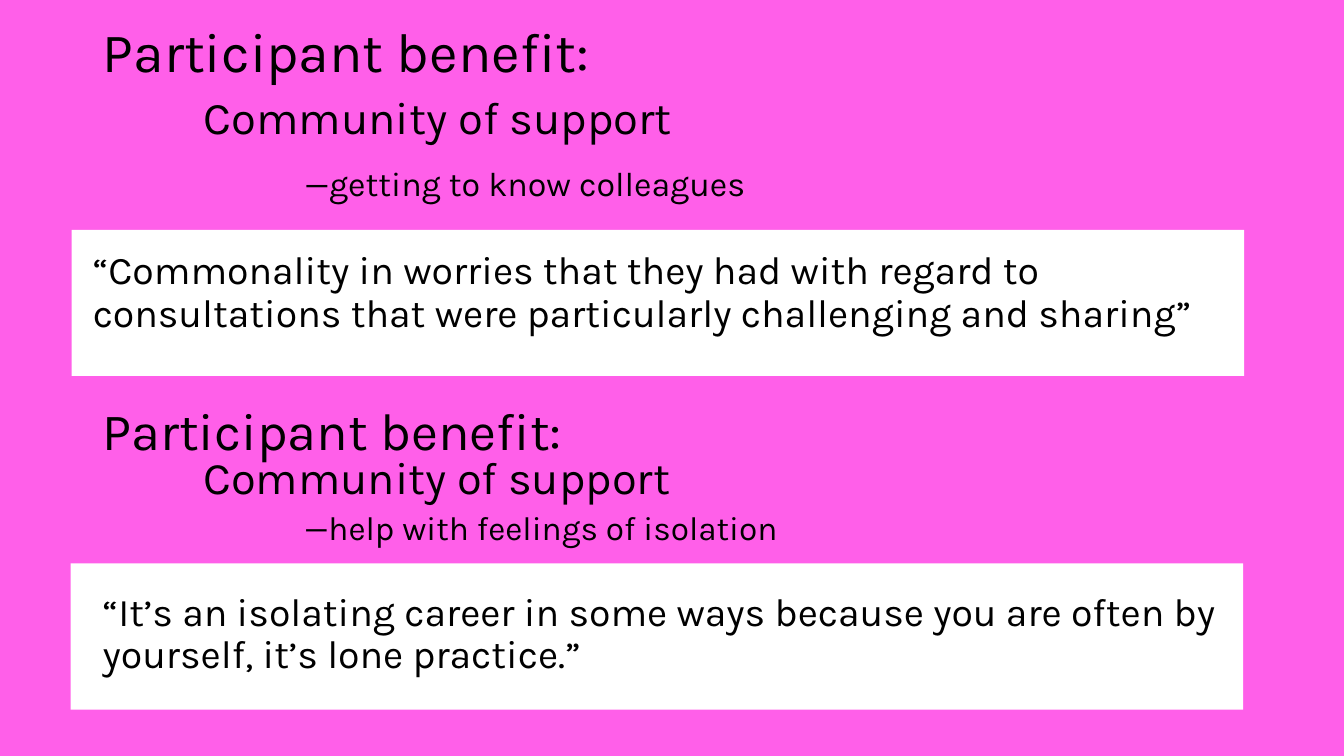
from dataclasses import dataclass

from lxml import etree
from pptx import Presentation
from pptx.dml.color import RGBColor
from pptx.enum.shapes import MSO_SHAPE
from pptx.enum.text import MSO_ANCHOR, MSO_AUTO_SIZE, PP_ALIGN
from pptx.oxml.ns import qn
from pptx.util import Emu, Pt

RECT = MSO_SHAPE.RECTANGLE
TOP, MIDDLE = MSO_ANCHOR.TOP, MSO_ANCHOR.MIDDLE
LEFT = PP_ALIGN.LEFT
FIXED = MSO_AUTO_SIZE.NONE
PX = 9144  # EMU per px, 100 px to the inch


@dataclass(frozen=True)
class Theme:
    font: str = "Karla"
    back: RGBColor = RGBColor(0xFF, 0x5F, 0xE9)
    card: RGBColor = RGBColor(0xFF, 0xFF, 0xFF)
    ink: RGBColor = RGBColor(0, 0, 0)
    upper: tuple = (39.6, 32.4, 24.3)
    lower: tuple = (37.4, 32.3, 23.8)
    quote: float = 28


@dataclass(frozen=True)
class Box:
    x: int
    y: int
    w: int
    h: int

    def emu(self) -> list:
        return [Emu(n * PX) for n in (self.x, self.y, self.w, self.h)]


@dataclass(frozen=True)
class Line:
    text: str
    size: float
    indent: int = 0


@dataclass(frozen=True)
class Block:
    box: Box
    lines: list
    pitch: object  # share of the line height, or a fixed height
    anchor: object


THEME = Theme()
STEP = 100  # indent of each heading level


def heading(box: Box, texts: list, sizes: tuple, pitch: float) -> Block:
    lines = [Line(text, size, level * STEP)
             for level, (text, size) in enumerate(zip(texts, sizes))]
    return Block(box, lines, Pt(pitch), MIDDLE)


def quote(box: Box, text: str) -> Block:
    return Block(box, [Line(text, THEME.quote)], 0.9, TOP)


CARDS = [Box(70, 559, 1163, 145), Box(71, 228, 1163, 145)]
HEAD = heading(
    Box(92, 40, 1150, 145),
    ["Participant benefit:", "Community of support",
     "—getting to know colleagues"],
    THEME.upper, 42.8)
BODY = quote(
    Box(82, 244, 1150, 112),
    "“Commonality in worries that they had with regard to consultations "
    "that were particularly challenging and sharing”")
EXTRAS = [
    heading(
        Box(92, 406, 1150, 145),
        ["Participant benefit:", "Community of support",
         "—help with feelings of isolation"],
        THEME.lower, 31),
    quote(
        Box(92, 583, 1150, 112),
        "“It’s an isolating career in some ways because you are often by "
        "yourself, it’s lone practice.”"),
]


def write(shape, block: Block) -> None:
    """Place a text shape and fill it line by line."""
    shape.left, shape.top, shape.width, shape.height = block.box.emu()
    frame = shape.text_frame
    frame.word_wrap = True
    frame.auto_size = FIXED
    frame.vertical_anchor = block.anchor
    for i, line in enumerate(block.lines):
        para = frame.add_paragraph() if i else frame.paragraphs[0]
        props = para._p.get_or_add_pPr()
        props.set("marL", str(line.indent * PX))
        props.set("indent", "0")
        etree.SubElement(props, qn("a:buNone"))
        para.alignment = LEFT
        para.line_spacing = block.pitch
        para.space_before = Pt(0)
        run = para.add_run()
        run.text = line.text
        run.font.name = THEME.font
        run.font.size = Pt(line.size)
        run.font.color.rgb = THEME.ink


def draw_card(slide, box: Box) -> None:
    """Add a plain panel behind the placeholders."""
    card = slide.shapes.add_shape(RECT, *box.emu())
    card.shadow.inherit = False
    card.fill.solid()
    card.fill.fore_color.rgb = THEME.card
    card.line.fill.background()
    slide.shapes.title._element.addprevious(card._element)


def main() -> None:
    deck = Presentation()
    deck.slide_width, deck.slide_height = Emu(1333 * PX), Emu(750 * PX)
    slide = deck.slides.add_slide(deck.slide_layouts[1])
    slide.background.fill.solid()
    slide.background.fill.fore_color.rgb = THEME.back

    # White panels
    for box in CARDS:
        draw_card(slide, box)

    # Upper heading and quote
    write(slide.shapes.title, HEAD)
    write(slide.placeholders[1], BODY)

    # Lower heading and quote
    for block in EXTRAS:
        write(slide.shapes.add_textbox(*block.box.emu()), block)

    deck.save("out.pptx")


if __name__ == "__main__":
    main()
